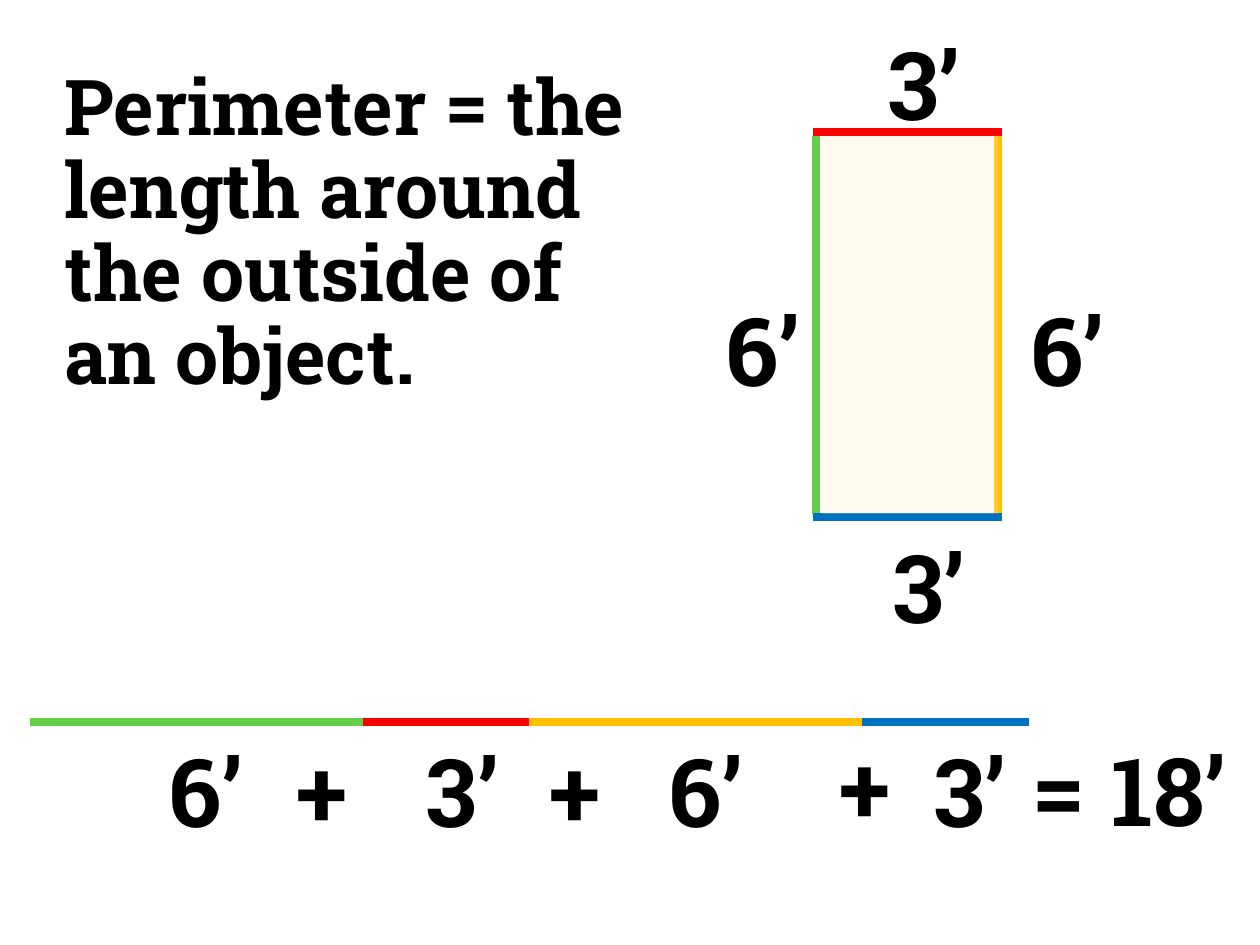
from lxml.etree import SubElement
from pptx import Presentation
from pptx.dml.color import RGBColor
from pptx.enum.shapes import MSO_CONNECTOR, MSO_SHAPE
from pptx.enum.text import MSO_ANCHOR, PP_ALIGN
from pptx.oxml.ns import qn
from pptx.util import Pt

SCALE = 914400 / 126


class Theme:
    font = "Roboto Slab"
    text = RGBColor(0, 0, 0)
    fill = RGBColor.from_string("FFEABD")
    opacity = 25
    green = RGBColor.from_string("66CD46")
    red = RGBColor.from_string("FF0000")
    yellow = RGBColor.from_string("FFC000")
    blue = RGBColor.from_string("0070C0")
    title_size = Pt(44)
    label_size = Pt(54)
    stroke = Pt(4.5)


TITLE = "Perimeter = the length around the outside of an object."
TITLE_BOX = (52, 84, 625, 302)
RECTANGLE = (822, 136, 176, 378)
SIDES = [
    ((998, 514), (998, 136), Theme.yellow),
    ((1002, 132), (813, 132), Theme.red),
    ((816, 514), (816, 136), Theme.green),
    ((1002, 517), (813, 517), Theme.blue),
]
LABEL_HEIGHT = 127
LABELS = [
    ("6’", 704, 286, 118),
    ("6’", 1004, 286, 127),
    ("3’", 837, 20, 173),
    ("3’", 842, 523, 173),
    ("6’", 134, 727, 144),
    ("+", 271, 727, 101),
    ("3’", 394, 727, 137),
    ("+", 524, 727, 101),
    ("6’", 650, 727, 112),
    ("+", 814, 723, 101),
    ("3’", 905, 727, 130),
    ("=", 1019, 727, 79),
    ("18’", 1086, 726, 166),
]
STRIP_LEFT, STRIP_Y, FOOT = 30, 722, 55.5
STRIP = [(6, Theme.green), (3, Theme.red), (6, Theme.yellow), (3, Theme.blue)]


def emu(*lengths):
    return [round(length * SCALE) for length in lengths]


def add_line(page, start, end, color):
    line = page.shapes.add_connector(MSO_CONNECTOR.STRAIGHT, *emu(*start, *end))
    line.line.color.rgb = color
    line.line.width = Theme.stroke
    SubElement(line._element.spPr, qn("a:effectLst"))


def add_text(page, text, bounds, size, align=PP_ALIGN.CENTER,
             anchor=MSO_ANCHOR.TOP, spacing=1.0):
    frame = page.shapes.add_textbox(*emu(*bounds)).text_frame
    frame.word_wrap = True
    frame.vertical_anchor = anchor
    para = frame.paragraphs[0]
    para.text = text
    para.alignment = align
    para.line_spacing = spacing
    para.font.name = Theme.font
    para.font.size = size
    para.font.bold = True
    para.font.color.rgb = Theme.text


def add_rectangle(page):
    shape = page.shapes.add_shape(MSO_SHAPE.RECTANGLE, *emu(*RECTANGLE))
    shape.shadow.inherit = False
    shape.line.fill.background()
    shape.fill.solid()
    shape.fill.fore_color.rgb = Theme.fill
    color = shape._element.spPr.find(qn("a:solidFill"))[0]
    SubElement(color, qn("a:alpha"), val=str(Theme.opacity * 1000))


def add_strip(page):
    left = STRIP_LEFT
    for feet, color in STRIP:
        right = left + feet * FOOT
        add_line(page, (left, STRIP_Y), (right, STRIP_Y), color)
        left = right


def main():
    deck = Presentation()
    deck.slide_width, deck.slide_height = emu(1260, 945)
    page = deck.slides.add_slide(deck.slide_layouts[6])
    add_text(page, TITLE, TITLE_BOX, Theme.title_size,
             PP_ALIGN.LEFT, MSO_ANCHOR.MIDDLE, 0.9)
    for side in SIDES:
        add_line(page, *side)
    add_rectangle(page)
    add_strip(page)
    for text, left, top, width in LABELS:
        add_text(page, text, (left, top, width, LABEL_HEIGHT), Theme.label_size)
    deck.save("out.pptx")


if __name__ == "__main__":
    main()
